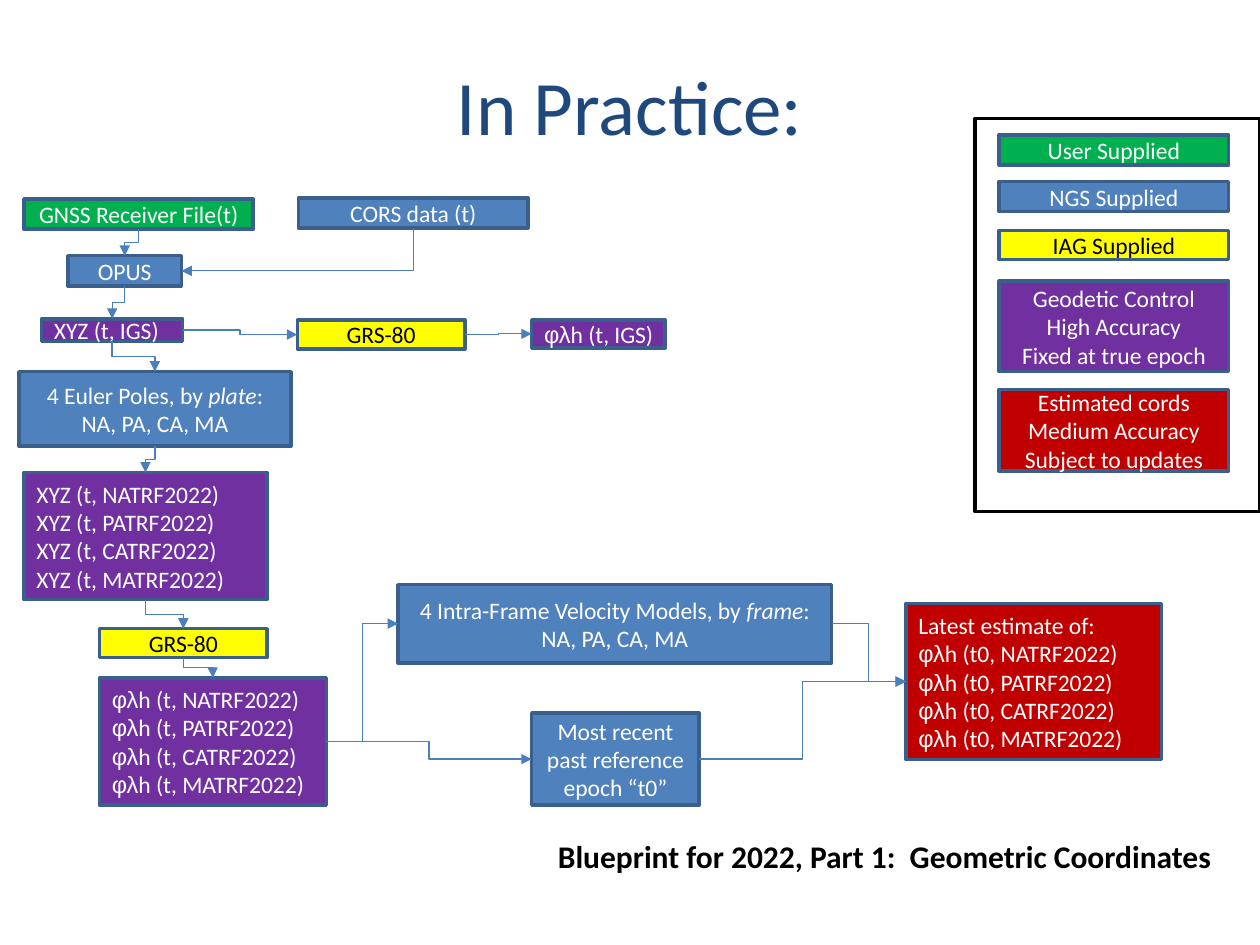
from pptx import Presentation
from pptx.dml.color import RGBColor
from pptx.enum import shapes, text
from pptx.oxml import ns, xmlchemy
from pptx.util import Inches, Pt

COLORS = {
    "user": "00B050", "ngs": "4F81BD", "iag": "FFFF00", "control": "7030A0",
    "estimate": "C00000", "border": "3A5F8C", "arrow": "4B7EBC",
    "title": "1F497D", "white": "FFFFFF", "black": "000000",
}
FRAMES = ["NATRF2022", "PATRF2022", "CATRF2022", "MATRF2022"]
PLATES = "NA, PA, CA, MA"
GREEK = "φλ"
TOP, LEFT, BOTTOM, RIGHT = range(4)
CENTER, START = text.PP_ALIGN.CENTER, text.PP_ALIGN.LEFT


def rgb(name):
    return RGBColor.from_string(COLORS[name])


def format_run(r, size, color, font="Calibri"):
    r.font.size, r.font.name = Pt(size), font
    r.font.color.rgb = rgb(color)


def add_line(p, line, color):
    """Write one line: *stars* mark italics, and Greek letters are in Arial."""
    for i, part in enumerate(line.split("*")):
        pieces = [(part, "Calibri")]
        if part.startswith(GREEK):
            pieces = [(GREEK, "Arial"), (part[len(GREEK):], "Calibri")]
        for piece, font in pieces:
            r = p.add_run()
            r.text = piece
            format_run(r, 13.5, color, font)
            if i % 2:
                r.font.italic = True


def add_box(s, origin, place, kind, lines, align=CENTER):
    """Add a filled box; place is left, top, width, height from the origin."""
    x, y, w, h = place
    sp = s.shapes.add_shape(shapes.MSO_SHAPE.RECTANGLE, Inches(origin[0] + x),
                            Inches(origin[1] + y), Inches(w), Inches(h))
    sp.shadow.inherit = False
    sp.fill.solid()
    sp.fill.fore_color.rgb = rgb(kind)
    sp.line.color.rgb = rgb("border")
    sp.line.width = Pt(2)
    tf = sp.text_frame
    tf.word_wrap = True
    tf.vertical_anchor = text.MSO_ANCHOR.MIDDLE
    if align == START:
        tf.margin_right = 0
    for i, line in enumerate(lines):
        p = tf.paragraphs[0] if i == 0 else tf.add_paragraph()
        p.alignment = align
        add_line(p, line, "black" if kind == "iag" else "white")
    return sp


def link(s, start, end, sites=(RIGHT, LEFT)):
    """Join two boxes with an elbow arrow between the given sides."""
    c = s.shapes.add_connector(shapes.MSO_CONNECTOR.ELBOW, 0, 0, 0, 0)
    c.begin_connect(start, sites[0])
    c.end_connect(end, sites[1])
    c.line.color.rgb = rgb("arrow")
    c.line.width = Pt(0.75)
    pr = c.element.spPr
    if sites[0] == BOTTOM:
        turn_down(c, pr.find(ns.qn("a:xfrm")))
        if sites[1] == RIGHT:
            pr.find(ns.qn("a:prstGeom")).set("prst", "bentConnector2")
    ln = pr.find(ns.qn("a:ln"))
    ln.append(xmlchemy.OxmlElement("a:tailEnd"))
    ln[-1].set("type", "triangle")
    pr.append(xmlchemy.OxmlElement("a:effectLst"))


def turn_down(c, xfrm):
    """Rotate a connector so that it leaves its first box downwards."""
    x1, y1, x2, y2 = c.begin_x, c.begin_y, c.end_x, c.end_y
    w, h = abs(y2 - y1), abs(x2 - x1)
    c.left, c.top = (x1 + x2 - w) // 2, (y1 + y2 - h) // 2
    c.width, c.height = w, h
    for flip in ("flipH", "flipV"):
        xfrm.attrib.pop(flip, None)
    xfrm.set("rot", str((270 if x2 > x1 else 90) * 60000))
    if x2 > x1:
        xfrm.set("flipH", "1")


def add_title(s, x, y, w, h):
    sp = s.shapes.title
    sp.left, sp.top, sp.width, sp.height = (Inches(v) for v in (x, y, w, h))
    tf = sp.text_frame
    tf.text = "In Practice:"
    tf.vertical_anchor = text.MSO_ANCHOR.MIDDLE
    p = tf.paragraphs[0]
    p.alignment = CENTER
    format_run(p.runs[0], 44, "title")


def add_coordinate_chain(s, x, y):
    """Draw the steps from receiver file to geodetic coordinates; return the last."""
    o = (x, y)
    gnss = add_box(s, o, (0.04, 0.01, 1.82, 0.24), "user", ["GNSS Receiver File(t)"])
    cors = add_box(s, o, (2.22, 0, 1.82, 0.24), "ngs", ["CORS data (t)"])
    opus = add_box(s, o, (0.39, 0.46, 0.9, 0.24), "ngs", ["OPUS"])
    xyz = add_box(s, o, (0.18, 0.96, 1.12, 0.18), "control", ["XYZ (t, IGS)"], START)
    igs_grs = add_box(s, o, (2.21, 0.97, 1.33, 0.23), "iag", ["GRS-80"])
    igs = add_box(s, o, (4.07, 0.97, 1.06, 0.22), "control",
                  [GREEK + "h (t, IGS)"], START)
    poles = add_box(s, o, (0, 1.38, 2.16, 0.59), "ngs",
                    ["4 Euler Poles, by *plate*:", PLATES])
    frames = add_box(s, o, (0.04, 2.18, 1.93, 1.01), "control",
                     [f"XYZ (t, {f})" for f in FRAMES], START)
    grs = add_box(s, o, (0.64, 3.42, 1.33, 0.23), "iag", ["GRS-80"])
    geodetic = add_box(s, o, (0.64, 3.81, 1.8, 1.01), "control",
                       [f"{GREEK}h (t, {f})" for f in FRAMES], START)

    steps = [gnss, opus, xyz, poles, frames, grs, geodetic]
    for start, end in zip(steps, steps[1:]):
        link(s, start, end, (BOTTOM, TOP))
    link(s, cors, opus, (BOTTOM, RIGHT))
    link(s, xyz, igs_grs)
    link(s, igs_grs, igs)
    return geodetic


def add_epoch_update(s, x, y, source):
    """Draw the two inputs that carry the source coordinates to epoch t0."""
    o = (x, y)
    models = add_box(s, o, (0, 0, 3.44, 0.62), "ngs",
                     ["4 Intra-Frame Velocity Models, by *frame*:", PLATES])
    epoch = add_box(s, o, (1.06, 1.02, 1.33, 0.73), "ngs",
                    ["Most recent past reference epoch “t0”"])
    latest = add_box(s, o, (4.03, 0.15, 2.03, 1.24), "estimate",
                     ["Latest estimate of:"]
                     + [f"{GREEK}h (t0, {f})" for f in FRAMES], START)
    for step in (models, epoch):
        link(s, source, step)
        link(s, step, latest)


def add_legend(s, x, y, w, h):
    entries = [
        (0.13, 0.24, "user", ["User Supplied"]),
        (0.5, 0.24, "ngs", ["NGS Supplied"]),
        (0.89, 0.23, "iag", ["IAG Supplied"]),
        (1.29, 0.72, "control",
         ["Geodetic Control", "High Accuracy", "Fixed at true epoch"]),
        (2.15, 0.65, "estimate",
         ["Estimated cords", "Medium Accuracy", "Subject to updates"]),
    ]
    for top, height, kind, lines in entries:
        add_box(s, (x, y), (0.19, top, 1.82, height), kind, lines)
    frame = s.shapes.add_shape(shapes.MSO_SHAPE.RECTANGLE, Inches(x), Inches(y),
                               Inches(w), Inches(h))
    frame.shadow.inherit = False
    frame.fill.background()
    frame.line.color.rgb = rgb("black")
    frame.line.width = Pt(2)


def add_caption(s, x, y, w, h):
    sp = s.shapes.add_textbox(Inches(x), Inches(y), Inches(w), Inches(h))
    tf = sp.text_frame
    tf.text = "Blueprint for 2022, Part 1:  Geometric Coordinates"
    tf.word_wrap = False
    tf.auto_size = text.MSO_AUTO_SIZE.SHAPE_TO_FIT_TEXT
    r = tf.paragraphs[0].runs[0]
    format_run(r, 18, "black")
    r.font.bold = True


def main():
    prs = Presentation()
    prs.slide_width, prs.slide_height = Inches(10), Inches(7.5)
    s = prs.slides.add_slide(prs.slide_layouts.get_by_name("Title Only"))
    add_title(s, 0.5, 0.21, 9, 1.25)
    geodetic = add_coordinate_chain(s, 0.15, 1.57)
    add_epoch_update(s, 3.16, 4.64, geodetic)
    add_legend(s, 7.74, 0.94, 2.26, 3.12)
    add_caption(s, 4.33, 6.59, 5.43, 0.4)
    prs.save("out.pptx")


if __name__ == "__main__":
    main()
